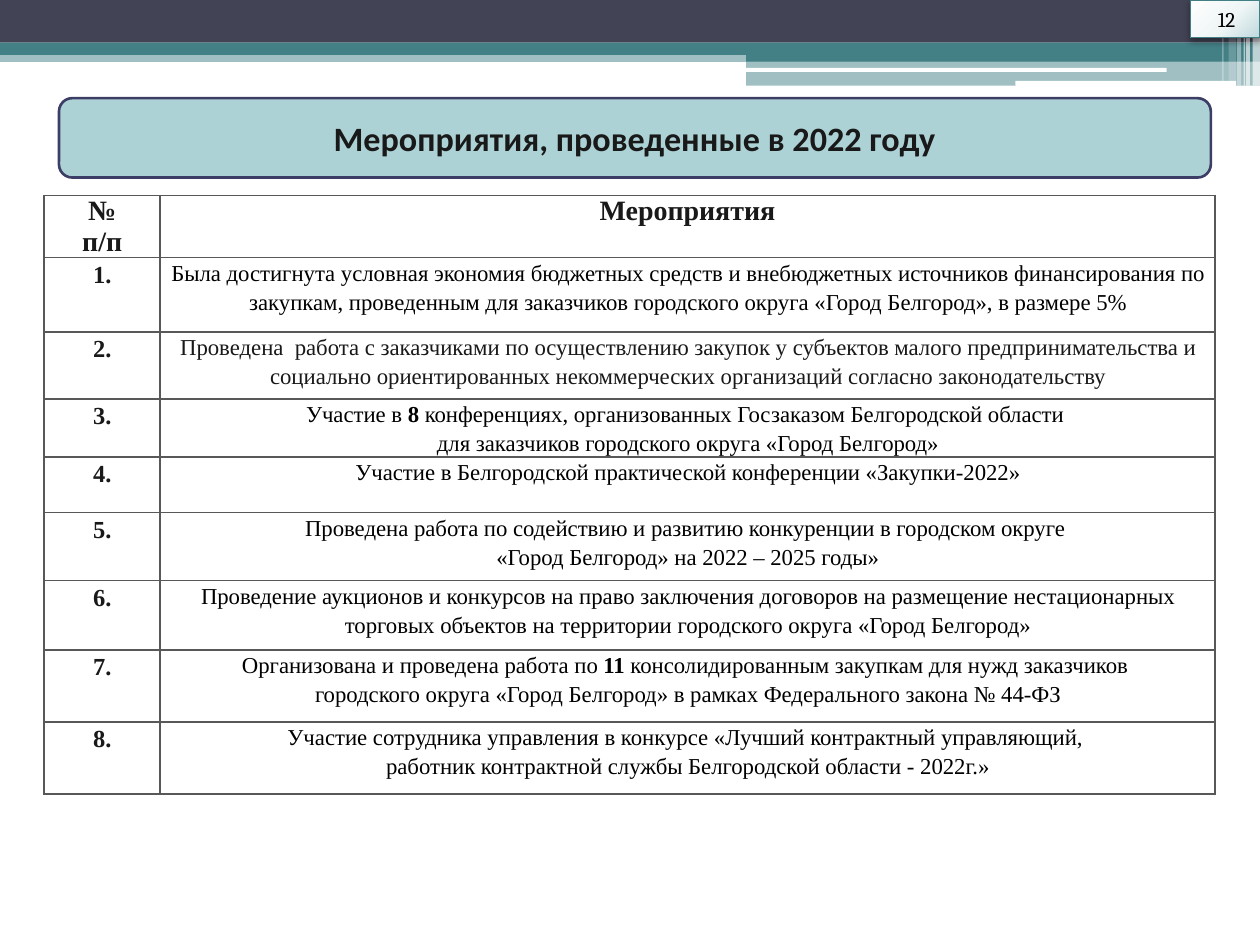
from dataclasses import dataclass

from lxml.etree import SubElement
from pptx import Presentation
from pptx.dml.color import RGBColor
from pptx.enum.shapes import MSO_SHAPE as Shp
from pptx.enum.text import MSO_ANCHOR as Anchor, PP_ALIGN as Align
from pptx.oxml import parse_xml
from pptx.oxml.ns import nsdecls, qn
from pptx.util import Cm, Pt

TEAL, NAVY, WHITE, INK, BLACK = "438086", "424456", "FFFFFF", "191919", "000000"
SERIF = "Times New Roman"


@dataclass
class Bar:
    x: float
    y: float
    w: float
    h: float
    color: str
    alpha: int = 100
    kind: Shp = Shp.RECTANGLE


@dataclass
class Run:
    text: str
    bold: bool = False


@dataclass
class Event:
    height: float
    paras: list[list[Run]]
    color: str = BLACK
    margin: float = 0.18
    after: float = 0


BARS = [
    Bar(0, 1.02, 25.4, 0.23, TEAL, 50),
    Bar(0, 0, 25.4, 0.86, NAVY),
    Bar(0, 0.86, 25.4, 0.25, TEAL),
    Bar(15.04, 0.99, 10.36, 0.25, TEAL),
    Bar(15.04, 1.22, 10.36, 0.51, TEAL, 50),
    Bar(15.01, 1.37, 8.51, 0.08, WHITE, kind=Shp.ROUNDED_RECTANGLE),
    Bar(20.47, 1.63, 4.45, 0.1, WHITE, kind=Shp.ROUNDED_RECTANGLE),
    Bar(25.25, 0, 0.15, 1.73, WHITE, 65),
    Bar(25.12, 0, 0.08, 1.73, WHITE, 65),
    Bar(25.07, 0, 0.03, 1.73, WHITE, 60),
    Bar(24.94, 0, 0.08, 1.73, WHITE, 40),
    Bar(24.77, 0, 0.15, 1.63, WHITE, 20),
    Bar(24.64, 0, 0.03, 1.63, WHITE, 30),
]

EVENTS = [
    Event(1.5, [[Run("Была достигнута условная экономия бюджетных средств и внебюджетных "
                     "источников финансирования по закупкам, проведенным для заказчиков "
                     "городского округа «Город Белгород», в размере 5%")]]),
    Event(1.35, [[Run("Проведена  работа с заказчиками по осуществлению закупок у субъектов "
                      "малого предпринимательства и социально ориентированных некоммерческих "
                      "организаций согласно законодательству")]], color=INK),
    Event(1.17, [[Run("Участие в"), Run(" 8 ", True),
                  Run("конференциях, организованных Госзаказом Белгородской области ")],
                 [Run("для заказчиков городского округа «Город Белгород»")]]),
    Event(1.12, [[Run("Участие в Белгородской практической конференции «Закупки-2022»")]],
          margin=0.3, after=10),
    Event(1.37, [[Run("Проведена работа по содействию и развитию конкуренции в городском округе ")],
                 [Run("«Город Белгород» на 2022 – 2025 годы»")]]),
    Event(1.4, [[Run("Проведение аукционов и конкурсов на право заключения договоров на "
                     "размещение нестационарных торговых объектов на территории городского "
                     "округа «Город Белгород»")]]),
    Event(1.45, [[Run("Организована и проведена работа по "), Run("11", True),
                  Run(" консолидированным закупкам для нужд заказчиков ")],
                 [Run("городского округа «Город Белгород» в рамках Федерального закона № 44-ФЗ")]]),
    Event(1.45, [[Run("Участие сотрудника управления в конкурсе «Лучший контрактный управляющий, ")],
                 [Run("работник контрактной службы Белгородской области - 2022г.»")]]),
]


def rgb(color: str) -> RGBColor:
    return RGBColor.from_string(color)


def add_run(p, text: str, size: float, font: str, color: str, bold: bool = False) -> None:
    r = p.add_run()
    r.text = text
    r.font.size = Pt(size)
    r.font.name = font
    r.font.bold = bold
    r.font.color.rgb = rgb(color)


def add_bar(s, bar: Bar):
    sp = s.shapes.add_shape(bar.kind, Cm(bar.x), Cm(bar.y), Cm(bar.w), Cm(bar.h))
    sp.shadow.inherit = False
    sp.line.fill.background()
    sp.fill.solid()
    sp.fill.fore_color.rgb = rgb(bar.color)
    if bar.alpha < 100:
        clr = sp.fill._xPr.find(qn("a:solidFill"))[0]
        SubElement(clr, qn("a:alpha"), val=str(bar.alpha * 1000))
    return sp


def outline(sp, color: str, width: float) -> None:
    sp.line.color.rgb = rgb(color)
    sp.line.width = Pt(width)


def add_title(s, text: str) -> None:
    sp = add_bar(s, Bar(1.19, 1.98, 23.22, 1.6, "ADD2D6", kind=Shp.ROUNDED_RECTANGLE))
    outline(sp, "3D3E66", 1.5)
    sp.text_frame.vertical_anchor = Anchor.MIDDLE
    p = sp.text_frame.paragraphs[0]
    p.alignment = Align.CENTER
    add_run(p, text, 19.5, "Calibri", INK, True)


def add_page_number(s, number: str) -> None:
    sp = add_bar(s, Bar(24, 0, 1.4, 0.76, WHITE))
    outline(sp, TEAL, 0.75)
    stops = "".join(f'<a:gs pos="{pos * 1000}"><a:srgbClr val="{color}"/></a:gs>'
                    for pos, color in ((0, "FEFEFE"), (55, "F0F6F6"), (100, "BFD9DD")))
    spPr = sp.fill._xPr
    spPr.replace(spPr.find(qn("a:solidFill")), parse_xml(
        f'<a:gradFill {nsdecls("a")}><a:gsLst>{stops}</a:gsLst><a:path path="circle">'
        '<a:fillToRect l="-40000" t="-90000" r="140000" b="190000"/></a:path></a:gradFill>'))
    shadow = SubElement(spPr.find(qn("a:effectLst")), qn("a:outerShdw"),
                        blurRad=str(Pt(4.1)), dist=str(Pt(2)), dir="5400000")
    clr = SubElement(shadow, qn("a:srgbClr"), val=BLACK)
    SubElement(clr, qn("a:alpha"), val="40000")
    tf = sp.text_frame
    tf.vertical_anchor = Anchor.MIDDLE
    p = tf.paragraphs[0]
    p.alignment = Align.LEFT
    p._p.get_or_add_pPr().set("marL", str(Cm(0.3)))
    add_run(p, number, 12, "Cambria", BLACK)


def fill_cell(cell, paras: list[list[Run]], size: float, color: str,
              spacing: float = 1.15, margin: float = 0.18, after: float = 0) -> None:
    cell.fill.background()
    cell.margin_left = cell.margin_right = Cm(margin)
    cell.margin_top = cell.margin_bottom = 0
    tcPr = cell._tc.get_or_add_tcPr()
    for i, side in enumerate(("lnL", "lnR", "lnT", "lnB")):
        tcPr.insert(i, parse_xml(
            f'<a:{side} {nsdecls("a")} w="{Pt(1)}"><a:solidFill>'
            f'<a:srgbClr val="585858"/></a:solidFill></a:{side}>'))
    tf = cell.text_frame
    for i, runs in enumerate(paras):
        p = tf.add_paragraph() if i else tf.paragraphs[0]
        p.alignment = Align.CENTER
        p.line_spacing = spacing
        p.space_after = Pt(after)
        for run in runs:
            add_run(p, run.text, size, SERIF, color, run.bold)


def add_events(s, events: list[Event]) -> None:
    heights = [0.91] + [e.height for e in events]
    widths = (2.34, 21.26)
    tbl = s.shapes.add_table(len(heights), 2, Cm(0.89), Cm(3.94),
                             Cm(sum(widths)), Cm(sum(heights))).table
    tbl.first_row = tbl.horz_banding = False
    for col, width in zip(tbl.columns, widths):
        col.width = Cm(width)
    for row, height in zip(tbl.rows, heights):
        row.height = Cm(height)
    fill_cell(tbl.cell(0, 0), [[Run("№", True)], [Run("п/п", True)]], 16, INK, 1.0)
    fill_cell(tbl.cell(0, 1), [[Run("Мероприятия", True)]], 16, INK, 1.0)
    for i, e in enumerate(events, 1):
        fill_cell(tbl.cell(i, 0), [[Run(f"{i}.", True)]], 14, INK)
        fill_cell(tbl.cell(i, 1), e.paras, 13, e.color, margin=e.margin, after=e.after)


def main() -> None:
    prs = Presentation()
    prs.slide_width, prs.slide_height = Cm(25.4), Cm(19.05)
    s = prs.slides.add_slide(prs.slide_layouts[6])
    for bar in BARS:
        add_bar(s, bar)
    add_events(s, EVENTS)
    add_title(s, "Мероприятия, проведенные в 2022 году")
    add_page_number(s, "12")
    prs.save("out.pptx")


if __name__ == "__main__":
    main()
